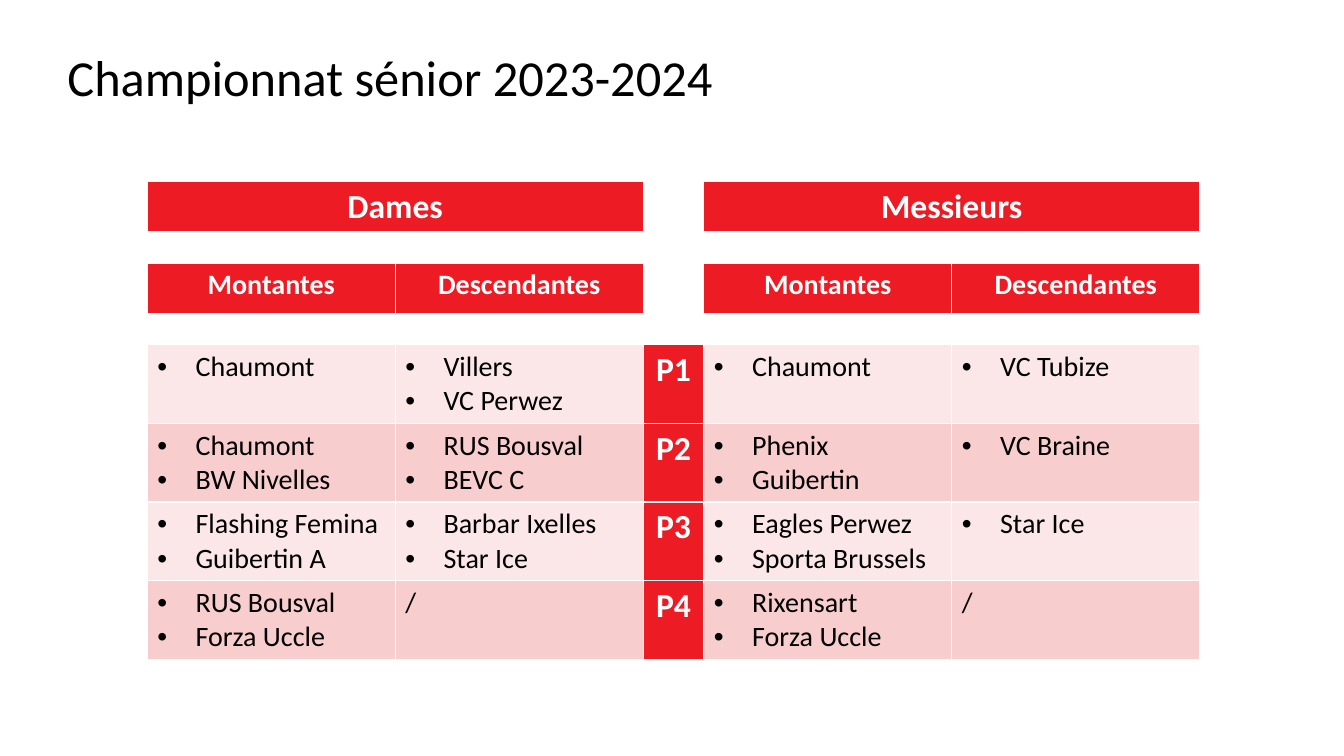
from dataclasses import dataclass

from pptx import Presentation
from pptx.dml.color import RGBColor as RGB
from pptx.enum.text import MSO_ANCHOR as Anchor, PP_ALIGN as Align
from pptx.oxml.ns import qn
from pptx.util import Inches, Pt
from lxml.etree import SubElement


@dataclass(frozen=True)
class Theme:
    font: str = "Calibri"
    bullet_font: str = "Arial"
    black: RGB = RGB(0x00, 0x00, 0x00)
    white: RGB = RGB(0xFF, 0xFF, 0xFF)
    red: RGB = RGB(0xED, 0x1C, 0x24)
    bands: tuple = (RGB(0xFC, 0xE7, 0xE8), RGB(0xF8, 0xCD, 0xCD))
    title_size: Pt = Pt(36)
    heading_size: Pt = Pt(24)
    body_size: Pt = Pt(20)
    border: Pt = Pt(1)


THEME = Theme()
COLUMN_WIDTHS = (2.46, 2.46, 0.6, 2.46, 2.46)
HEADING_HEIGHT, GAP_HEIGHT, DIVISION_HEIGHT = 0.5, 0.31, 0.78
FIRST_DIVISION_ROW = 4
DIVISION_COLUMN = 2
TEAM_COLUMNS = (0, 1, 3, 4)
DIVISIONS = {
    "P1": (["Chaumont"], ["Villers", "VC Perwez"],
           ["Chaumont"], ["VC Tubize"]),
    "P2": (["Chaumont", "BW Nivelles"], ["RUS Bousval", "BEVC C"],
           ["Phenix", "Guibertin"], ["VC Braine"]),
    "P3": (["Flashing Femina", "Guibertin A"], ["Barbar Ixelles", "Star Ice"],
           ["Eagles Perwez", "Sporta Brussels"], ["Star Ice"]),
    "P4": (["RUS Bousval", "Forza Uccle"], [],
           ["Rixensart", "Forza Uccle"], []),
}


def format_runs(paragraph, size, color, bold=False):
    for run in paragraph.runs:
        run.font.name = THEME.font
        run.font.size = size
        run.font.bold = bold
        run.font.color.rgb = color


def add_bullet(paragraph):
    properties = paragraph._p.get_or_add_pPr()
    properties.set("marL", str(Inches(0.38)))
    properties.set("indent", str(-Inches(0.38)))
    SubElement(properties, qn("a:buFont"), typeface=THEME.bullet_font)
    SubElement(properties, qn("a:buChar"), char="•")


def add_borders(cell):
    properties = cell._tc.get_or_add_tcPr()
    for side in ("lnL", "lnR", "lnT", "lnB"):
        line = SubElement(properties, qn(f"a:{side}"), w=str(THEME.border))
        fill = SubElement(line, qn("a:solidFill"))
        SubElement(fill, qn("a:srgbClr"), val=str(THEME.white))


def paint(cell, color):
    cell.fill.solid()
    cell.fill.fore_color.rgb = color


def fill_heading(cell, label, size):
    paint(cell, THEME.red)
    heading = cell.text_frame.paragraphs[0]
    heading.text = label
    heading.alignment = Align.CENTER
    format_runs(heading, size, THEME.white, bold=True)


def fill_teams(cell, teams, band):
    paint(cell, band)
    cell.text_frame.text = "\n".join(teams) or "/"
    for entry in cell.text_frame.paragraphs:
        if teams:
            add_bullet(entry)
        format_runs(entry, THEME.body_size, THEME.black)


def add_title(slide, wording):
    box = slide.shapes.add_textbox(Inches(0.57), Inches(0.4), Inches(12.22), Inches(0.79))
    frame = box.text_frame
    frame.word_wrap = True
    frame.vertical_anchor = Anchor.MIDDLE
    frame.text = wording
    frame.paragraphs[0].line_spacing = 0.9
    format_runs(frame.paragraphs[0], THEME.title_size, THEME.black)


def add_grid(slide):
    heights = [HEADING_HEIGHT, GAP_HEIGHT] * 2 + [DIVISION_HEIGHT] * len(DIVISIONS)
    grid = slide.shapes.add_table(
        len(heights), len(COLUMN_WIDTHS), Inches(1.46), Inches(1.8),
        Inches(sum(COLUMN_WIDTHS)), Inches(sum(heights))).table
    grid.first_row = grid.horz_banding = False
    for column, width in zip(grid.columns, COLUMN_WIDTHS):
        column.width = Inches(width)
    for row, height in zip(grid.rows, heights):
        row.height = Inches(height)
        for cell in row.cells:
            add_borders(cell)
            paint(cell, THEME.white)
            if height == GAP_HEIGHT:
                cell.margin_top = cell.margin_bottom = 0
    return grid


def fill_grid(grid):
    for column, category in ((0, "Dames"), (3, "Messieurs")):
        grid.cell(0, column).merge(grid.cell(0, column + 1))
        fill_heading(grid.cell(0, column), category, THEME.heading_size)
        for offset, movement in enumerate(("Montantes", "Descendantes")):
            fill_heading(grid.cell(2, column + offset), movement, THEME.body_size)
    for index, (division, team_lists) in enumerate(DIVISIONS.items()):
        row = FIRST_DIVISION_ROW + index
        fill_heading(grid.cell(row, DIVISION_COLUMN), division, THEME.heading_size)
        for column, teams in zip(TEAM_COLUMNS, team_lists):
            fill_teams(grid.cell(row, column), teams, THEME.bands[index % 2])


def main():
    deck = Presentation()
    deck.slide_width, deck.slide_height = Inches(13.33), Inches(7.5)
    slide = deck.slides.add_slide(deck.slide_layouts[6])
    add_title(slide, "Championnat sénior 2023-2024")
    fill_grid(add_grid(slide))
    deck.save("out.pptx")


if __name__ == "__main__":
    main()
